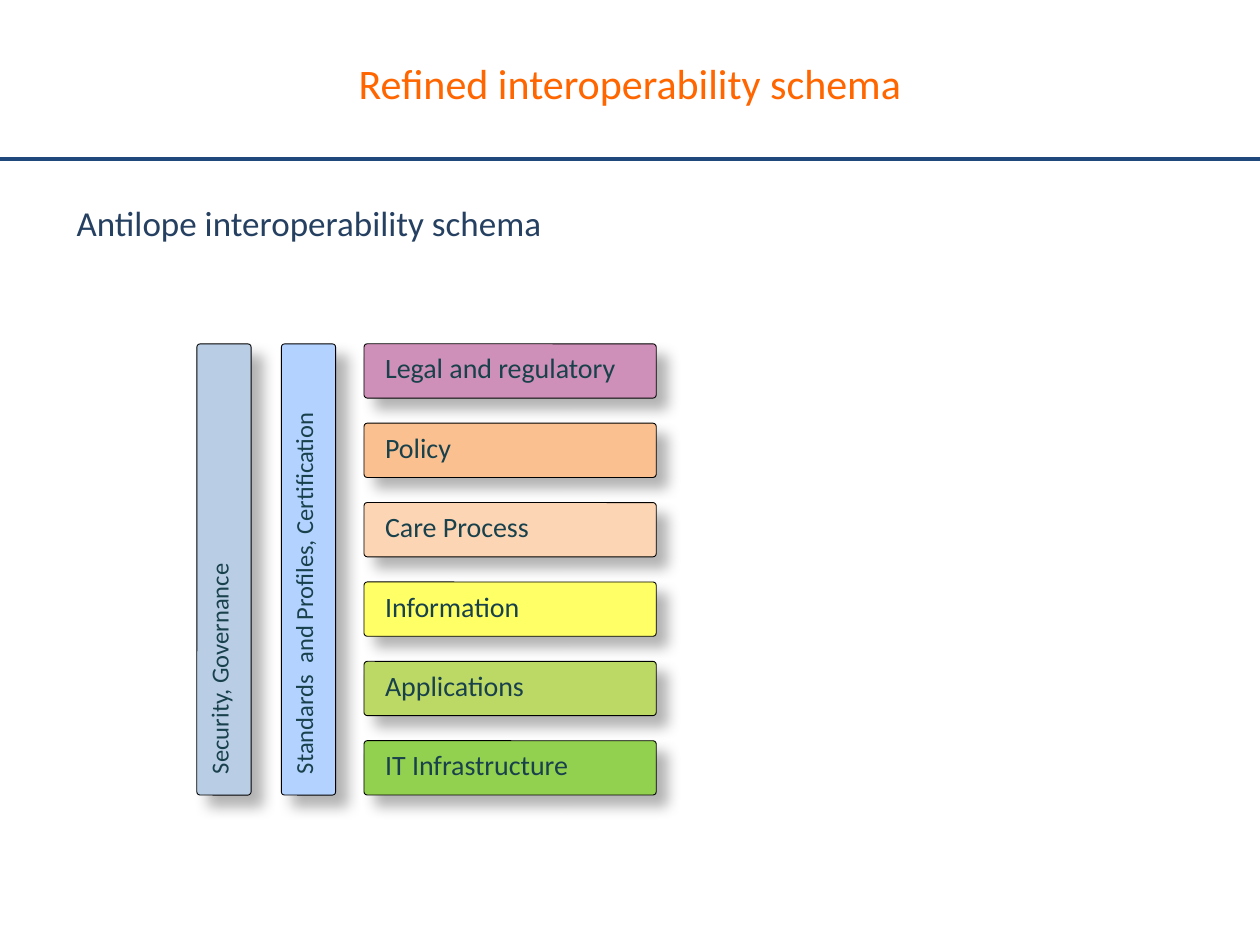
from dataclasses import dataclass

from lxml.etree import SubElement
from pptx import Presentation
from pptx.dml.color import RGBColor
from pptx.enum.shapes import MSO_CONNECTOR, MSO_SHAPE
from pptx.enum.text import MSO_ANCHOR, PP_ALIGN
from pptx.oxml.ns import qn
from pptx.util import Pt


@dataclass(frozen=True)
class Theme:
    font: str = "Calibri"
    title: str = "FF6600"
    head: str = "254061"
    ink: str = "18414C"
    rule: str = "1F497D"
    edge: str = "000000"
    bars: tuple = ("B9CDE5", "B3D2FF")
    rows: tuple = ("CE90B8", "FAC090", "FCD5B5", "FFFF66", "BDD965", "92D050")
    title_size: int = 24
    head_size: int = 20
    row_size: int = 16
    bar_size: int = 14


def rgb(code):
    return RGBColor.from_string(code)


def write(frame, text, *, font, size, color, align=PP_ALIGN.LEFT,
          anchor=MSO_ANCHOR.TOP, left=7.2):
    """Fill a text frame with one formatted paragraph."""
    frame.word_wrap = True
    frame.vertical_anchor = anchor
    frame.margin_left = Pt(left)
    para = frame.paragraphs[0]
    para.alignment = align
    run = para.add_run()
    run.text = text
    run.font.name = font
    run.font.size = Pt(size)
    run.font.color.rgb = rgb(color)


def shade(shape):
    """Give a shape a soft shadow to the lower right."""
    shape.shadow.inherit = False
    effects = shape.element.spPr.find(qn("a:effectLst"))
    outer = SubElement(effects, qn("a:outerShdw"), blurRad=str(Pt(8)),
                       dist=str(Pt(9)), dir="2700000", algn="tl",
                       rotWithShape="0")
    color = SubElement(outer, qn("a:srgbClr"), val="000000")
    SubElement(color, qn("a:alpha"), val="30000")


class Painter:
    def __init__(self, slide, theme):
        self.slide = slide
        self.theme = theme

    def rule(self, y, width):
        line = self.slide.shapes.add_connector(
            MSO_CONNECTOR.STRAIGHT, Pt(0), Pt(y), Pt(width), Pt(y))
        line.line.color.rgb = rgb(self.theme.rule)
        line.line.width = Pt(2.25)
        SubElement(line.element.spPr, qn("a:effectLst"))

    def label(self, text, x, y, width, height, **style):
        box = self.slide.shapes.add_textbox(
            Pt(x), Pt(y), Pt(width), Pt(height))
        write(box.text_frame, text, font=self.theme.font, **style)

    def block(self, text, x, y, width, height, fill, size, turn=0):
        shape = self.slide.shapes.add_shape(
            MSO_SHAPE.ROUNDED_RECTANGLE,
            Pt(x), Pt(y), Pt(width), Pt(height))
        shape.adjustments[0] = 0.06
        shape.rotation = turn
        shape.fill.solid()
        shape.fill.fore_color.rgb = rgb(fill)
        shape.line.color.rgb = rgb(self.theme.edge)
        shape.line.width = Pt(0.5)
        shade(shape)
        write(shape.text_frame, text, font=self.theme.font, size=size,
              color=self.theme.ink, left=11.5)


def main():
    deck = Presentation()
    deck.slide_width, deck.slide_height = Pt(720), Pt(540)
    theme = Theme()
    art = Painter(deck.slides.add_slide(deck.slide_layouts[6]), theme)

    # Header
    art.rule(90.7, 720)
    art.label("Refined interoperability schema", 170, 18.7, 380, 57,
              size=theme.title_size, color=theme.title,
              align=PP_ALIGN.CENTER, anchor=MSO_ANCHOR.MIDDLE)
    art.label("Antilope interoperability schema", 36.7, 111.6, 448, 34,
              size=theme.head_size, color=theme.head)

    # Layers, from top to bottom
    top, pitch, thick = 196.5, 45.36, 31
    names = ("Legal and regulatory", "Policy", "Care Process",
             "Information", "Applications", "IT Infrastructure")
    for i, (name, fill) in enumerate(zip(names, theme.rows)):
        art.block(name, 208, top + i * pitch, 167, thick, fill,
                  theme.row_size)

    # Upright bars spanning all layers, turned about their centres
    span = (len(names) - 1) * pitch + thick
    mid = top + span / 2
    bars = ("Security, Governance", "Standards  and Profiles, Certification")
    for i, (name, fill) in enumerate(zip(bars, theme.bars)):
        center = 128 + i * 48.3
        art.block(name, center - span / 2, mid - thick / 2, span, thick,
                  fill, theme.bar_size, turn=270)

    deck.save("out.pptx")


if __name__ == "__main__":
    main()
